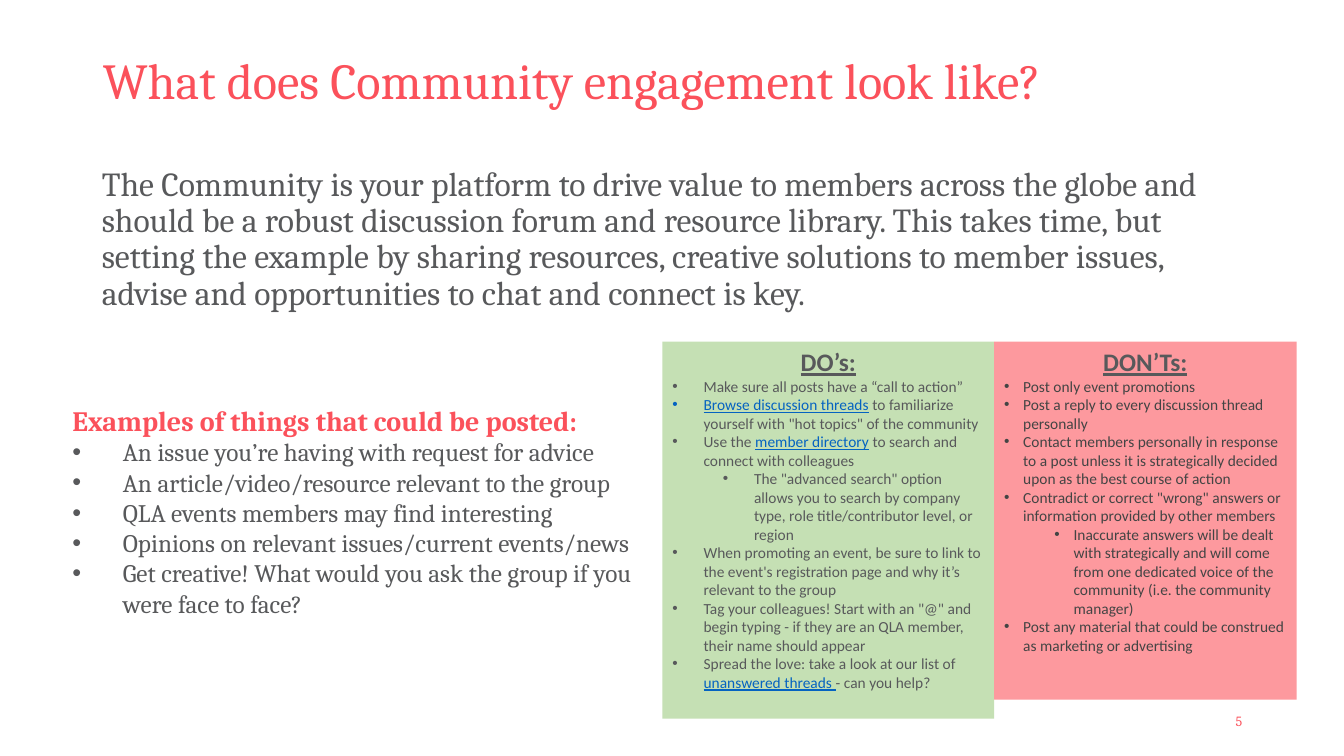
from lxml.etree import SubElement
from pptx import Presentation
from pptx.dml.color import RGBColor
from pptx.enum.shapes import MSO_SHAPE
from pptx.enum.text import MSO_ANCHOR, MSO_AUTO_SIZE, PP_ALIGN
from pptx.oxml.ns import qn
from pptx.util import Inches, Pt

# Content: (level, text) per bullet, with |...| around link-styled words
TITLE = "What does Community engagement look like?"
INTRO = ("The Community is your platform to drive value to members across the globe and "
         "should be a robust discussion forum and resource library. This takes time, but "
         "setting the example by sharing resources, creative solutions to member issues, "
         "advise and opportunities to chat and connect is key.")
PAGE = "5"
EXAMPLES_HEAD = "Examples of things that could be posted:"
EXAMPLES = [
    (0, "An issue you’re having with request for advice"),
    (0, "An article/video/resource relevant to the group"),
    (0, "QLA events members may find interesting"),
    (0, "Opinions on relevant issues/current events/news"),
    (0, "Get creative! What would you ask the group if you were face to face?"),
]
DOS = [
    (0, "Make sure all posts have a “call to action”"),
    (0, '|Browse discussion threads| to familiarize yourself with "hot topics" of the community'),
    (0, "Use the |member directory| to search and connect with colleagues"),
    (1, 'The "advanced search" option allows you to search by company type, '
        "role title/contributor level, or region"),
    (0, "When promoting an event, be sure to link to the event's registration page "
        "and why it’s relevant to the group"),
    (0, 'Tag your colleagues! Start with an "@" and begin typing - if they are '
        "an QLA member, their name should appear"),
    (0, "Spread the love: take a look at our list of |unanswered threads |- can you help?"),
]
DONTS = [
    (0, "Post only event promotions"),
    (0, "Post a reply to every discussion thread personally"),
    (0, "Contact members personally in response to a post unless it is strategically "
        "decided upon as the best course of action"),
    (0, 'Contradict or correct "wrong" answers or information provided by other members'),
    (1, "Inaccurate answers will be dealt with strategically and will come from one "
        "dedicated voice of the community (i.e. the community manager)"),
    (0, "Post any material that could be construed as marketing or advertising"),
]

CORAL = RGBColor(0xFB, 0x51, 0x5B)
GREY = RGBColor(0x58, 0x59, 0x5B)
DARK = RGBColor(0x44, 0x44, 0x44)
LINK = RGBColor(0x05, 0x63, 0xC1)
GREEN = RGBColor(0xC5, 0xE0, 0xB4)
PINK = RGBColor(0xFD, 0x99, 0x9E)
SERIF, SANS = "Cambria", "Calibri"

# Layout in inches
CARD_LEFT, CARD_TOP = 6.57, 3.39
CARDS = [  # heading, bullets, fill, text colour, width, height, indent
    ("DO’s:", DOS, GREEN, GREY, 3.29, 3.74, 0.31),
    ("DON’Ts:", DONTS, PINK, DARK, 3, 3.55, 0.19),
]
LEVEL_STEP = 0.5


def style(r, font, size, color, bold=False, underline=False):
    r.font.name, r.font.size, r.font.color.rgb = font, Pt(size), color
    r.font.bold, r.font.underline = bold, underline


def place(sp, left, top, width, height):
    sp.left, sp.top, sp.width, sp.height = map(Inches, (left, top, width, height))


def setup(sp, anchor=MSO_ANCHOR.TOP):
    tf = sp.text_frame
    tf.word_wrap, tf.auto_size, tf.vertical_anchor = True, MSO_AUTO_SIZE.NONE, anchor
    return tf


def add_bullets(tf, items, indent, font, size, color):
    for level, text in items:
        p = tf.add_paragraph()
        p.level, p.alignment = level, PP_ALIGN.LEFT
        pPr = p._p.get_or_add_pPr()
        pPr.set("marL", str(Inches(indent + level * LEVEL_STEP)))
        pPr.set("indent", str(-Inches(indent)))
        SubElement(pPr, qn("a:buFont")).set("typeface", "Arial")
        SubElement(pPr, qn("a:buChar")).set("char", "•")
        for i, part in enumerate(text.split("|")):
            if part:
                r = p.add_run()
                r.text = part
                linked = i % 2 == 1
                style(r, font, size, LINK if linked else color, underline=linked)


prs = Presentation()
prs.slide_width, prs.slide_height = Inches(13.33), Inches(7.5)
s = prs.slides.add_slide(prs.slide_layouts[1])

# Title
place(s.shapes.title, 0.92, 0.4, 11.5, 0.86)
tf = setup(s.shapes.title, MSO_ANCHOR.MIDDLE)
tf.text = TITLE
p = tf.paragraphs[0]
p.alignment, p.line_spacing = PP_ALIGN.LEFT, 0.9
style(p.runs[0], SERIF, 36, CORAL)

# Introduction
body = s.placeholders[1]
place(body, 0.91, 1.61, 11.52, 4.79)
tf = setup(body)
tf.text = INTRO
p = tf.paragraphs[0]
pPr = p._p.get_or_add_pPr()
pPr.set("marL", "0")
pPr.set("indent", "0")
SubElement(pPr, qn("a:buNone"))
p.line_spacing, p.space_before = 0.9, Pt(0)
style(p.runs[0], SERIF, 24, GREY)

# Page number
number = s.shapes.add_textbox(*map(Inches, (9.42, 6.95, 3, 0.4)))
tf = setup(number, MSO_ANCHOR.MIDDLE)
tf.text = PAGE
tf.paragraphs[0].alignment = PP_ALIGN.RIGHT
style(tf.paragraphs[0].runs[0], SERIF, 10, CORAL)

# Examples
examples = s.shapes.add_textbox(*map(Inches, (0.62, 3.95, 6.05, 2.56)))
tf = setup(examples)
tf.text = EXAMPLES_HEAD
style(tf.paragraphs[0].runs[0], SERIF, 20, CORAL, bold=True)
add_bullets(tf, EXAMPLES, 0.5, SERIF, 18, GREY)

# Do and don't cards, side by side
left = CARD_LEFT
for heading, items, fill, color, width, height, indent in CARDS:
    card = s.shapes.add_shape(MSO_SHAPE.RECTANGLE,
                              *map(Inches, (left, CARD_TOP, width, height)))
    card.shadow.inherit = False
    card.fill.solid()
    card.fill.fore_color.rgb = fill
    card.line.fill.background()
    tf = setup(card)
    tf.text = heading
    tf.paragraphs[0].alignment = PP_ALIGN.CENTER
    style(tf.paragraphs[0].runs[0], SANS, 18, GREY, bold=True, underline=True)
    add_bullets(tf, items, indent, SANS, 11, color)
    left += width

prs.save("out.pptx")
